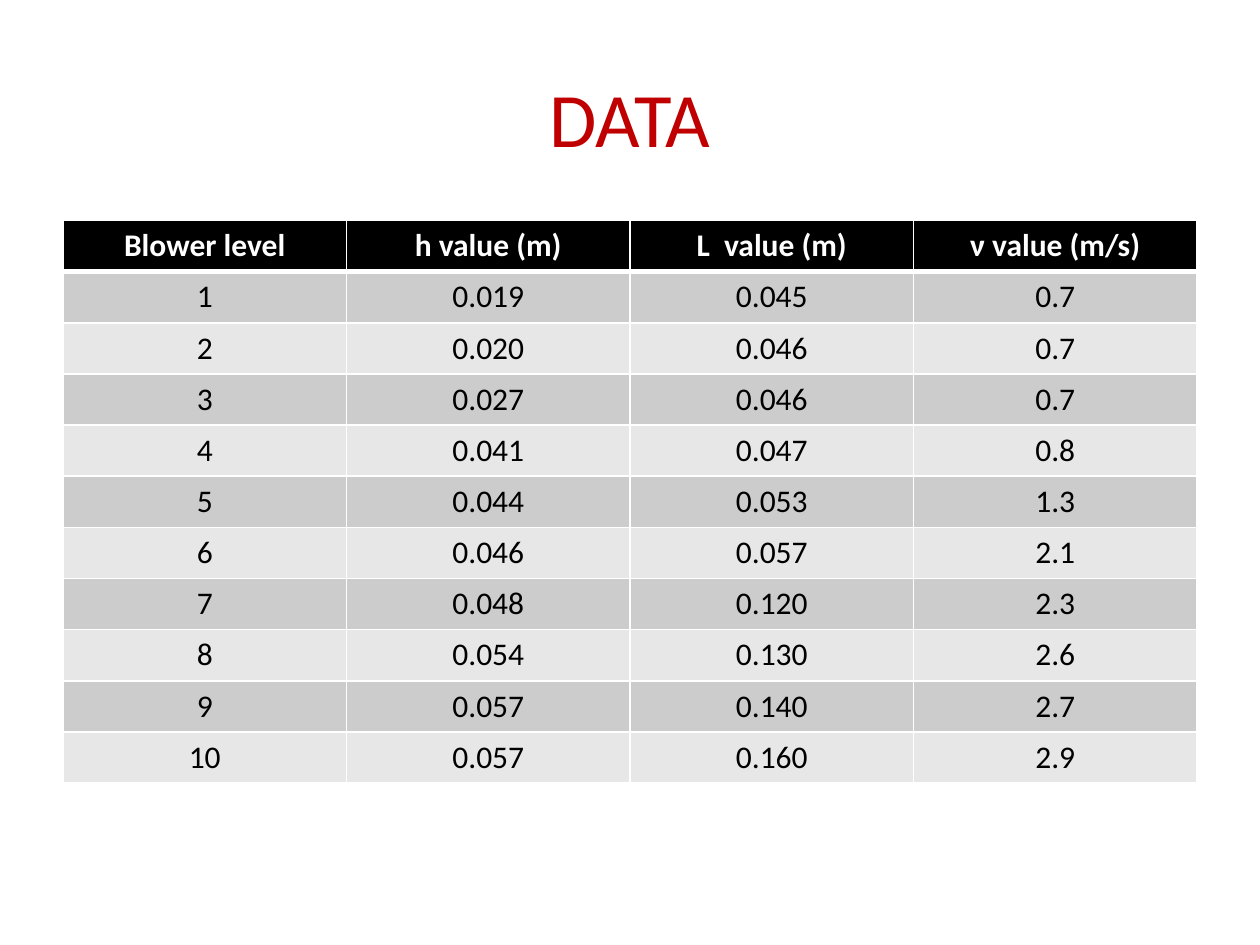
from lxml.etree import SubElement
from pptx import Presentation
from pptx.dml.color import RGBColor
from pptx.enum.text import MSO_ANCHOR as Anchor, PP_ALIGN as Align
from pptx.oxml.ns import qn
from pptx.util import Pt

PX = 9525
FONT = "Calibri"
RED = RGBColor(0xC0, 0x00, 0x00)
BLACK = RGBColor(0x00, 0x00, 0x00)
WHITE = RGBColor(0xFF, 0xFF, 0xFF)
DARK_BAND = RGBColor(0xCC, 0xCC, 0xCC)
LIGHT_BAND = RGBColor(0xE7, 0xE7, 0xE7)

TITLE = "DATA"
HEADER = ("Blower level", "h value (m)", "L  value (m)", "ν value (m/s)")
READINGS = [
    ("1", "0.019", "0.045", "0.7"),
    ("2", "0.020", "0.046", "0.7"),
    ("3", "0.027", "0.046", "0.7"),
    ("4", "0.041", "0.047", "0.8"),
    ("5", "0.044", "0.053", "1.3"),
    ("6", "0.046", "0.057", "2.1"),
    ("7", "0.048", "0.120", "2.3"),
    ("8", "0.054", "0.130", "2.6"),
    ("9", "0.057", "0.140", "2.7"),
    ("10", "0.057", "0.160", "2.9"),
]
LEFT, TITLE_TOP, TITLE_H = 48, 29, 120
TABLE_TOP, COL_W, ROW_H = 168, 216, 39


def px(*values):
    return [v * PX for v in values]


def write(tf, text, size, color, bold=False):
    tf.text = text
    p = tf.paragraphs[0]
    p.alignment = Align.CENTER
    font = p.runs[0].font
    font.name, font.size, font.bold = FONT, Pt(size), bold
    font.color.rgb = color


def set_borders(cell, **widths):
    tc_pr = cell._tc.get_or_add_tcPr()
    for side, width in widths.items():
        ln = SubElement(tc_pr, qn(f"a:ln{side}"), w=str(Pt(width)))
        fill = SubElement(ln, qn("a:solidFill"))
        SubElement(fill, qn("a:srgbClr"), val=str(WHITE))


def add_title(slide):
    box = slide.shapes.add_textbox(*px(LEFT, TITLE_TOP, COL_W * len(HEADER), TITLE_H))
    tf = box.text_frame
    tf.word_wrap = True
    tf.vertical_anchor = Anchor.MIDDLE
    write(tf, TITLE, 44, RED)


def add_readings(slide):
    rows = [HEADER, *READINGS]
    n_rows, n_cols = len(rows), len(HEADER)
    frame = slide.shapes.add_table(
        n_rows, n_cols, *px(LEFT, TABLE_TOP, COL_W * n_cols, ROW_H * n_rows))
    table = frame.table
    for col in table.columns:
        col.width = COL_W * PX
    for i, values in enumerate(rows):
        table.rows[i].height = ROW_H * PX
        is_header = i == 0
        band = BLACK if is_header else DARK_BAND if i % 2 else LIGHT_BAND
        for j, value in enumerate(values):
            cell = table.cell(i, j)
            set_borders(cell, L=1, R=1, T=3 if i == 1 else 1, B=3 if is_header else 1)
            cell.fill.solid()
            cell.fill.fore_color.rgb = band
            write(cell.text_frame, value, 18, WHITE if is_header else BLACK, is_header)


def main():
    """Build the slide with the blower measurements."""
    prs = Presentation()
    prs.slide_width, prs.slide_height = px(960, 720)
    slide = prs.slides.add_slide(prs.slide_layouts[6])
    add_title(slide)
    add_readings(slide)
    prs.save("out.pptx")


if __name__ == "__main__":
    main()
